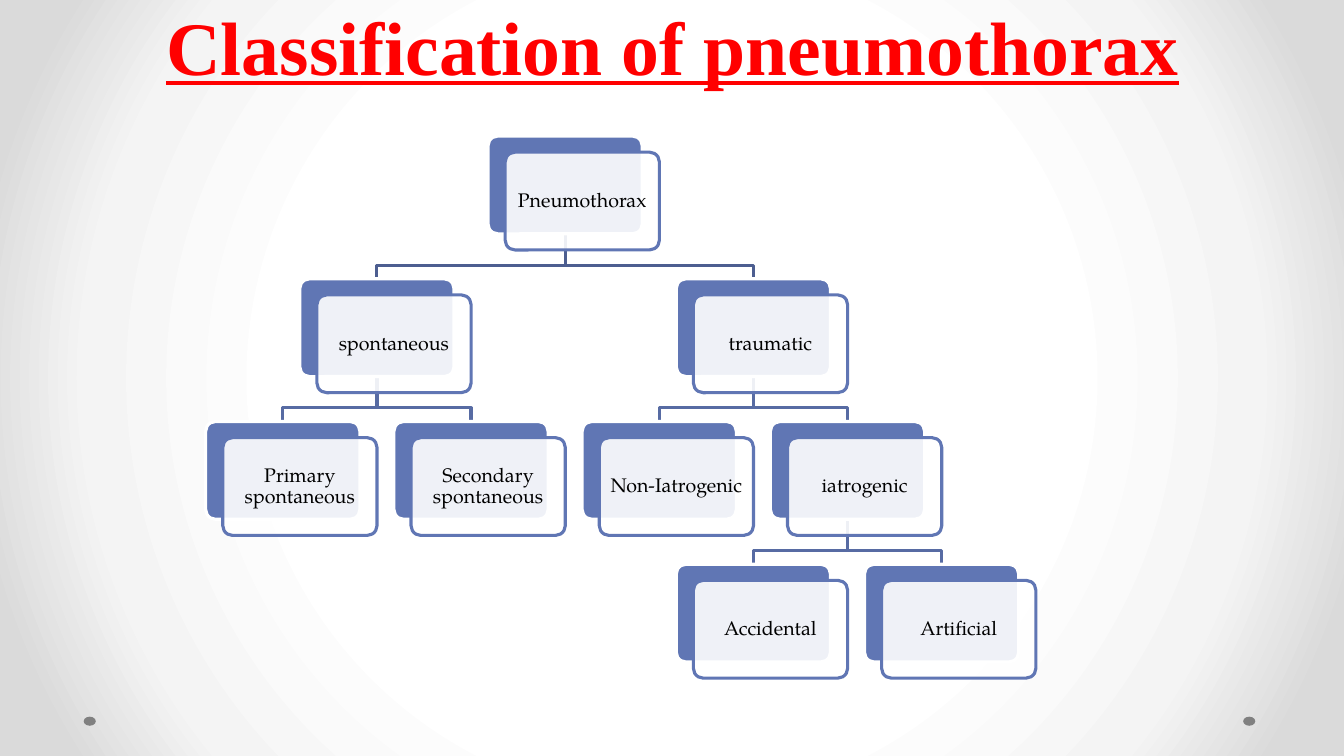
from dataclasses import dataclass
from lxml import etree
from pptx import Presentation
from pptx.dml.color import RGBColor
from pptx.enum import shapes, text
from pptx.oxml import parse_xml
from pptx.oxml.ns import nsdecls, qn
from pptx.util import Inches, Pt


@dataclass(frozen=True)
class Theme:
    title_color: str = "FF0000"
    ink: str = "000000"
    paper: str = "FFFFFF"
    accent: str = "6076B4"
    root_link: str = "4D5E90"
    link: str = "576BA3"
    dot: str = "808080"
    backdrop: tuple = ((50, "FFFFFF"), (76, "F4F4F4"), (92, "DADADA"))
    title_font: str = "Times New Roman"
    body_font: str = "TeX Gyre Pagella"
    title_size: int = 54
    title_leading: int = 58
    body_size: int = 14
    stroke: float = 2.25


THEME = Theme()
CARD_W, CARD_H = 1.53, 0.97
COLUMN_PITCH, ROW_PITCH = 1.867, 1.416
FRONT_DX, FRONT_DY = 0.17, 0.16
ELBOW_DROP = 0.31

CLASSIFICATION = ("Pneumothorax", 1.5, [
    ("spontaneous", 0.5, [
        ("Primary spontaneous", 0, []),
        ("Secondary spontaneous", 1, []),
    ]),
    ("traumatic", 2.5, [
        ("Non-Iatrogenic", 2, []),
        ("iatrogenic", 3, [
            ("Accidental", 2.5, []),
            ("Artificial", 3.5, []),
        ]),
    ]),
])


def rgb(value):
    return RGBColor.from_string(value)


def paint_backdrop(slide):
    slide.background.fill.solid()
    solid = slide.element.find(".//" + qn("p:bgPr")).find(qn("a:solidFill"))
    stops = "".join(
        f'<a:gs pos="{position * 1000}"><a:srgbClr val="{color}"/></a:gs>'
        for position, color in THEME.backdrop)
    gradient = parse_xml(
        f'<a:gradFill {nsdecls("a")} rotWithShape="1"><a:gsLst>{stops}</a:gsLst>'
        '<a:path path="circle"><a:fillToRect l="50000" t="50000" r="50000" b="50000"/>'
        '</a:path></a:gradFill>')
    solid.getparent().replace(solid, gradient)


def add_dots(slide, left, top, span):
    for x in (left + span, left):
        dot = slide.shapes.add_shape(shapes.MSO_SHAPE.OVAL, Inches(x), Inches(top),
                                     Inches(0.12), Inches(0.09))
        dot.shadow.inherit = False
        dot.fill.solid()
        dot.fill.fore_color.rgb = rgb(THEME.dot)
        dot.line.fill.background()


def add_title(slide, left, top, width, height):
    title = slide.shapes.add_textbox(Inches(left), Inches(top), Inches(width), Inches(height))
    frame = title.text_frame
    frame.word_wrap = True
    frame.vertical_anchor = text.MSO_ANCHOR.BOTTOM
    frame.margin_bottom = Pt(THEME.title_leading) + Inches(0.05)
    heading = frame.paragraphs[0]
    heading.text = "Classification of pneumothorax"
    heading.alignment = text.PP_ALIGN.CENTER
    heading.line_spacing = Pt(THEME.title_leading)
    heading.font.name = THEME.title_font
    heading.font.size = Pt(THEME.title_size)
    heading.font.bold = True
    heading.font.underline = True
    heading.font.color.rgb = rgb(THEME.title_color)


def add_card(slide, left, top, fill, line):
    card = slide.shapes.add_shape(shapes.MSO_SHAPE.ROUNDED_RECTANGLE, Inches(left), Inches(top),
                                  Inches(CARD_W), Inches(CARD_H))
    card.adjustments[0] = 0.1
    card.shadow.inherit = False
    card.fill.solid()
    card.fill.fore_color.rgb = rgb(fill)
    card.line.color.rgb = rgb(line)
    card.line.width = Pt(THEME.stroke)
    return card


def add_node(slide, name, left, top):
    add_card(slide, left, top, THEME.accent, THEME.paper)
    front = add_card(slide, left + FRONT_DX, top + FRONT_DY, THEME.paper, THEME.accent)
    color = front.fill._xPr.find(qn("a:solidFill")).find(qn("a:srgbClr"))
    etree.SubElement(color, qn("a:alpha"), val="90000")
    frame = front.text_frame
    frame.word_wrap = True
    frame.vertical_anchor = text.MSO_ANCHOR.MIDDLE
    frame.margin_left = frame.margin_right = Inches(0.06)
    frame.margin_top = frame.margin_bottom = Inches(0.06)
    label = frame.paragraphs[0]
    label.text = name
    label.alignment = text.PP_ALIGN.CENTER
    label.line_spacing = 0.9
    label.font.name = THEME.body_font
    label.font.size = Pt(THEME.body_size)
    label.font.color.rgb = rgb(THEME.ink)


def add_link(slide, start, end, color):
    (x1, y1), (x2, y2) = start, end
    bend = y1 + ELBOW_DROP
    builder = slide.shapes.build_freeform(Inches(x1), Inches(y1))
    builder.add_line_segments(
        [(Inches(x), Inches(y)) for x, y in ((x1, bend), (x2, bend), (x2, y2))], close=False)
    link = builder.convert_to_shape()
    link.shadow.inherit = False
    link.fill.background()
    link.line.color.rgb = rgb(color)
    link.line.width = Pt(THEME.stroke)


def walk(node, row=0):
    yield node, row
    for child in node[2]:
        yield from walk(child, row + 1)


def add_tree(slide, left, top, root):
    def corner(column, row):
        return left + column * COLUMN_PITCH, top + row * ROW_PITCH

    nodes = list(walk(root))
    for (_, column, children), row in nodes:
        x, y = corner(column, row)
        for _, child_column, _ in children:
            child_x, child_y = corner(child_column, row + 1)
            add_link(slide, (x + CARD_W / 2, y + CARD_H), (child_x + CARD_W / 2, child_y),
                     THEME.link if row else THEME.root_link)
    for (name, column, _), row in nodes:
        add_node(slide, name, *corner(column, row))


def main():
    deck = Presentation()
    deck.slide_width, deck.slide_height = Inches(13.33), Inches(7.5)
    slide = deck.slides.add_slide(deck.slide_layouts[6])
    paint_backdrop(slide)
    add_dots(slide, 0.83, 7.11, 11.5)
    add_title(slide, 0.67, 0, 12, 1.75)
    add_tree(slide, 2.04, 1.35, CLASSIFICATION)
    deck.save("out.pptx")


if __name__ == "__main__":
    main()
